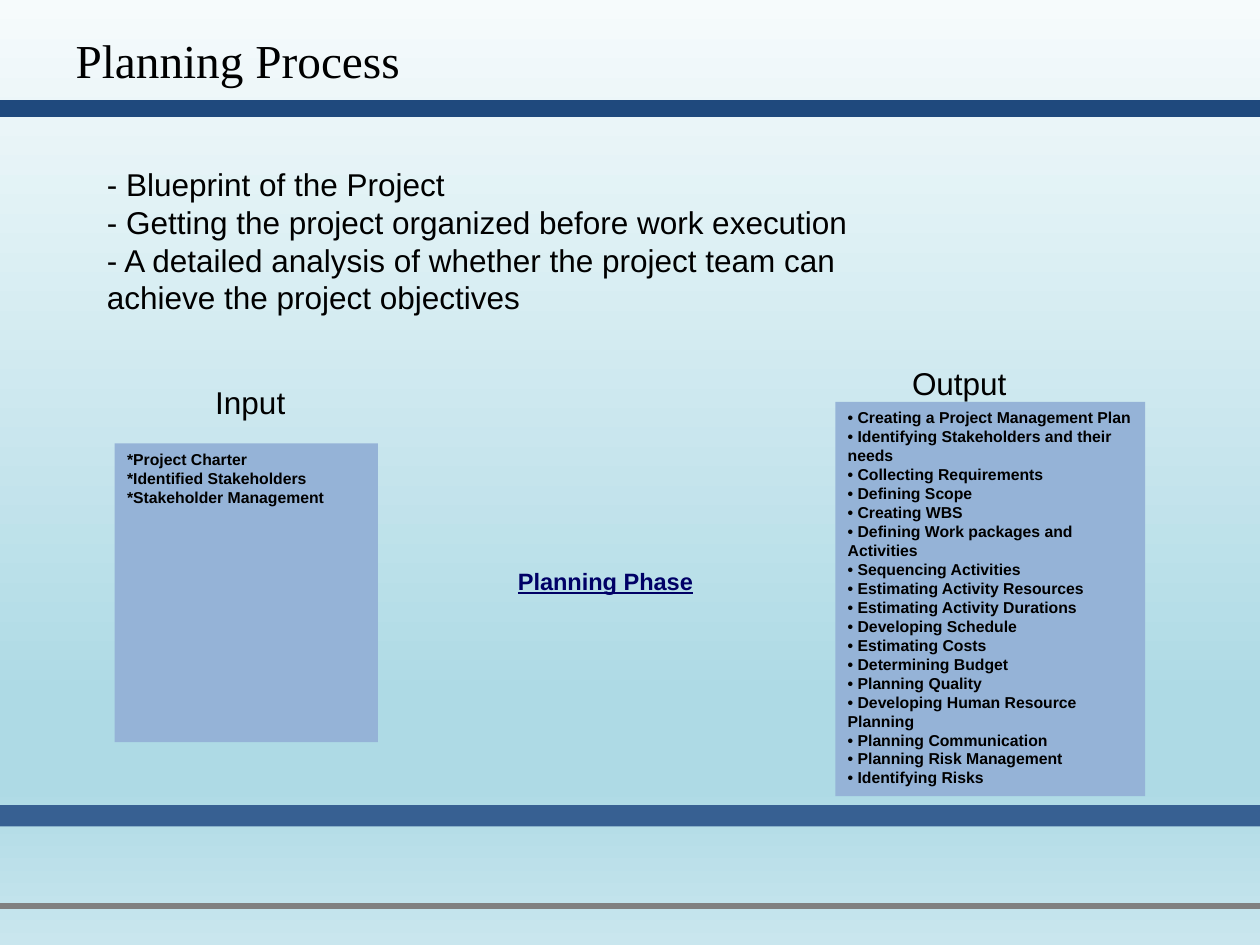
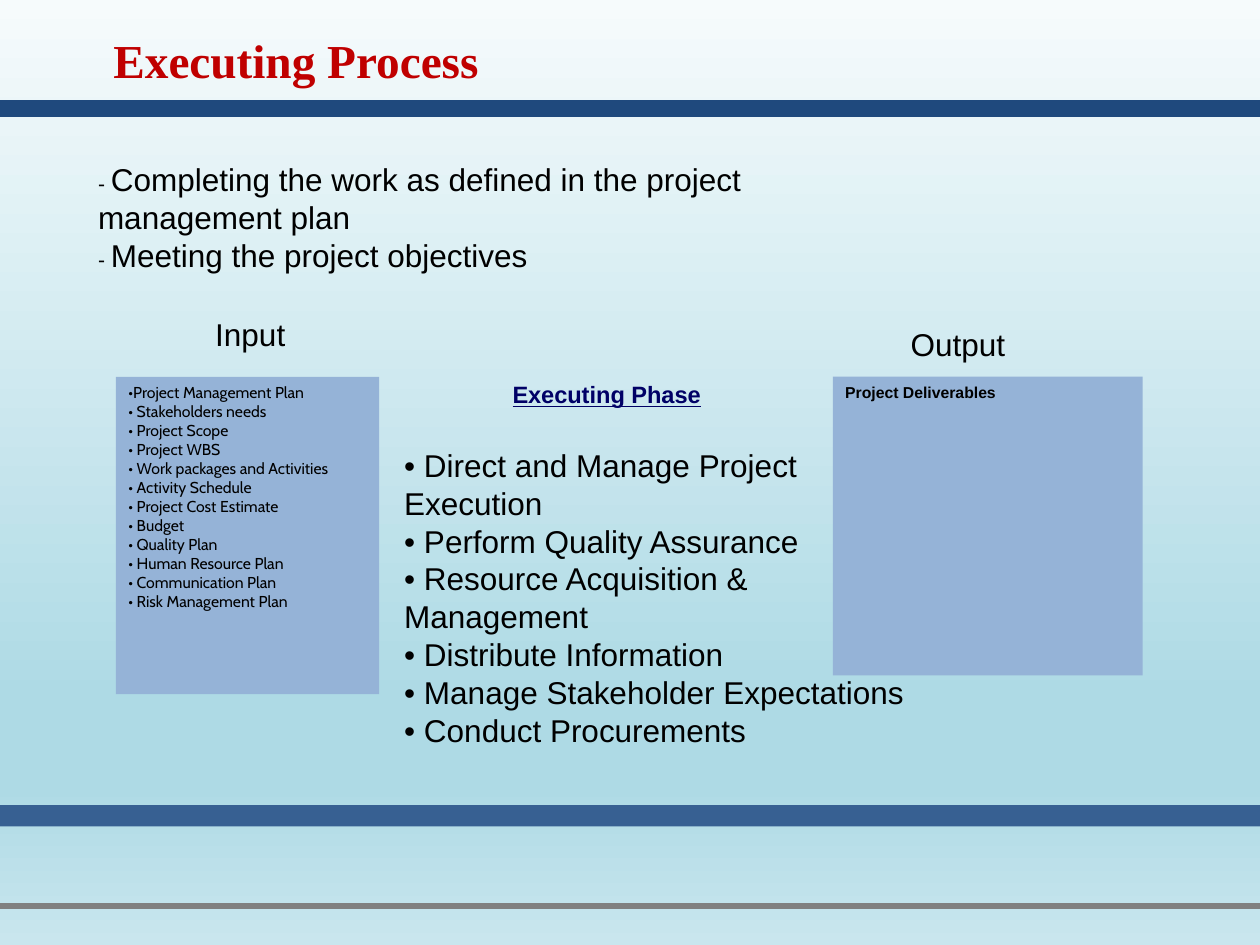
import copy

import pptx
import pptx.dml.color
import pptx.enum.shapes
import pptx.enum.text
import pptx.oxml
import pptx.oxml.ns
import pptx.util

PP = pptx.enum.text.PP_ALIGN
ANCHOR = pptx.enum.text.MSO_ANCHOR
SHAPE = pptx.enum.shapes.MSO_SHAPE

# Grid of 100 columns and 75 rows
prs = pptx.Presentation()
prs.slide_width, prs.slide_height = pptx.util.Inches(10), pptx.util.Inches(7.5)
COL, ROW = prs.slide_width / 100, prs.slide_height / 75

BACKGROUND = [(0, "F6FBFC"), (74, "AEDAE5"), (83, "AEDAE5"), (100, "C9E6EE")]
RULES = [(8.6, "1F497D", 10), (71.9, "808080", 3)]  # row, colour, points
BAND, PANEL = "376092", "95B3D7"

# Text formats
BODY = {"name": "Arial", "size": 18, "color": "000000"}
SMALL = {**BODY, "size": 9, "bold": True}
SMALL_CABIN = {**SMALL, "name": "Cabin", "bold": False}
PHASE = {**BODY, "size": 13.5, "color": "000066", "bold": True, "underline": True}
TITLE = {**BODY, "name": "Times New Roman", "size": 27}
RED_TITLE = {**TITLE, "color": "C00000", "bold": True}


def rgb(color):
    return pptx.dml.color.RGBColor.from_string(color)


def write(sp, paragraphs, style, align=PP.LEFT, anchor=ANCHOR.TOP):
    """Fill sp with paragraphs, each a string or a list of (text, size) runs."""
    tf = sp.text_frame
    tf.word_wrap = True
    tf.vertical_anchor = anchor
    for i, paragraph in enumerate(paragraphs):
        p = tf.add_paragraph() if i else tf.paragraphs[0]
        p.alignment = align
        runs = [(paragraph, style["size"])] if isinstance(paragraph, str) else paragraph
        for text, size in runs:
            r = p.add_run()
            r.text = text
            for key, value in {**style, "size": pptx.util.Pt(size)}.items():
                if key == "color":
                    r.font.color.rgb = rgb(value)
                else:
                    setattr(r.font, key, value)


# Shared background
fill = prs.slide_master.background.fill
fill.gradient()
fill.gradient_angle = 270
stops = next(prs.slide_master.element.iter(pptx.oxml.ns.qn("a:gsLst")))
while len(stops) < len(BACKGROUND):
    stops.append(copy.deepcopy(stops[-1]))
for stop, (position, color) in zip(fill.gradient_stops, BACKGROUND):
    stop.color.rgb = rgb(color)
    stop.position = position / 100

# Boxes are (left, top, width, height) in grid units
slides = [
    {
        "title": ("Planning Process", 5, TITLE),
        "panels": [
            ((9.1, 35.2, 20.9, 23.7), SMALL, [
                "*Project Charter",
                "*Identified Stakeholders",
                "*Stakeholder Management",
            ]),
            ((66.3, 31.9, 24.6, 31.3), SMALL, [
                "• Creating a Project Management Plan",
                "• Identifying Stakeholders and their needs",
                "• Collecting Requirements",
                "• Defining Scope",
                "• Creating WBS",
                "• Defining Work packages and Activities",
                "• Sequencing Activities",
                "• Estimating Activity Resources",
                "• Estimating Activity Durations",
                "• Developing Schedule",
                "• Estimating Costs",
                "• Determining Budget",
                "• Planning Quality",
                "• Developing Human Resource Planning",
                "• Planning Communication",
                "• Planning Risk Management",
                "• Identifying Risks",
            ]),
        ],
        "phase": ("Planning Phase", 36.7, 44.5),
        "labels": [("Input", 16.1, 29.9, 8.9), ("Output", 71.4, 28.4, 11.6)],
        "texts": [
            ((7.5, 12.6, 66.9, 13.1), [
                "- Blueprint of the Project",
                "- Getting the project organized before work execution",
                "- A detailed analysis of whether the project team can "
                "achieve the project objectives",
            ]),
        ],
    },
    {
        "title": ("Executing Process", 8, RED_TITLE),
        "panels": [
            ((9.2, 29.9, 20.9, 25.2), SMALL_CABIN, [
                "•Project Management Plan",
                "• Stakeholders needs",
                "• Project Scope",
                "• Project WBS",
                "• Work packages and Activities",
                "• Activity Schedule",
                "• Project Cost Estimate",
                "• Budget",
                "• Quality Plan",
                "• Human Resource Plan",
                "• Communication Plan",
                "• Risk Management Plan",
            ]),
            ((66.1, 29.9, 24.6, 23.7), SMALL, ["Project Deliverables"]),
        ],
        "phase": ("Executing Phase", 36.8, 29.7),
        "labels": [("Input", 16.1, 24.5, 8.9), ("Output", 71.3, 25.3, 11.3)],
        "texts": [
            ((6.8, 12.2, 66.9, 10.1), [
                [("- ", 12), ("Completing the work as defined in the project "
                              "management plan", 18)],
                [("- ", 12), ("Meeting the project objectives", 18)],
            ]),
            ((31.1, 34.9, 44.2, 25.2), [
                "• Direct and Manage Project Execution",
                "• Perform Quality Assurance",
                "• Resource Acquisition & Management",
                "• Distribute Information",
                "• Manage Stakeholder Expectations",
                "• Conduct Procurements",
            ]),
        ],
    },
]

for content in slides:
    s = prs.slides.add_slide(prs.slide_layouts[5])

    for row, color, width in RULES:
        y = int(row * ROW)
        rule = s.shapes.add_connector(
            pptx.enum.shapes.MSO_CONNECTOR.STRAIGHT, 0, y, prs.slide_width, y)
        rule.line.color.rgb = rgb(color)
        rule.line.width = pptx.util.Pt(width)
        rule.element.spPr.append(pptx.oxml.parse_xml(
            f"<a:effectLst {pptx.oxml.ns.nsdecls('a')}/>"))

    heading, left, style = content["title"]
    title = s.shapes.title
    title.left, title.top = int(left * COL), int(0.6 * ROW)
    title.width, title.height = int(87.1 * COL), int(8.3 * ROW)
    write(title, [heading], style, anchor=ANCHOR.MIDDLE)

    band = ((0, 63.9, 100, 1.7), SMALL, [])
    for (x, y, w, h), style, lines in [band] + content["panels"]:
        sp = s.shapes.add_shape(SHAPE.RECTANGLE, int(x * COL), int(y * ROW),
                                int(w * COL), int(h * ROW))
        sp.shadow.inherit = False
        sp.fill.solid()
        sp.fill.fore_color.rgb = rgb(PANEL if lines else BAND)
        sp.line.fill.background()
        write(sp, lines, style)

    phase, x, y = content["phase"]
    boxes = [((x, y, 22.7, 3.3), [phase], PHASE, PP.CENTER)]
    boxes += [((x, y, w, 4), [label], BODY, PP.LEFT)
              for label, x, y, w in content["labels"]]
    boxes += [(box, lines, BODY, PP.LEFT) for box, lines in content["texts"]]
    for (x, y, w, h), lines, style, align in boxes:
        sp = s.shapes.add_textbox(int(x * COL), int(y * ROW),
                                  int(w * COL), int(h * ROW))
        write(sp, lines, style, align)

prs.save("out.pptx")
